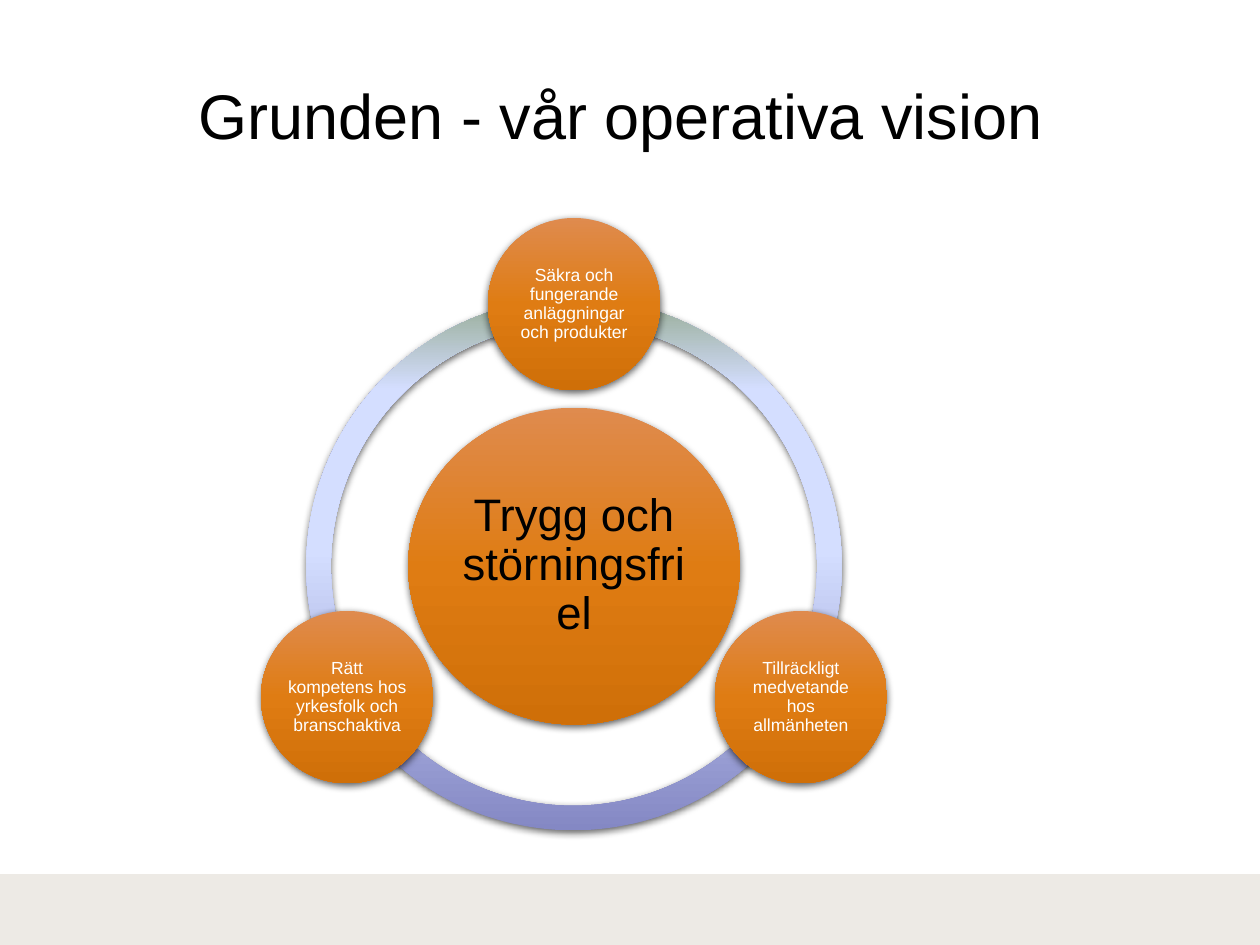
from math import cos, radians, sin

from lxml.etree import SubElement
from pptx import Presentation
from pptx.dml.color import RGBColor
from pptx.enum.shapes import MSO_SHAPE as Shape
from pptx.enum.text import MSO_ANCHOR as Anchor, PP_ALIGN as Align
from pptx.oxml.ns import qn
from pptx.util import Pt

RING_STOPS = [(0, "8488C4"), (53, "D4DEFF"), (83, "D4DEFF"), (100, "96AB94")]
CIRCLE_STOPS = [(0, "DF8B4E"), (50, "DF7C13"), (100, "CF6F08")]
CENTRE_X, CENTRE_Y = 328, 323.5
ORBIT = 149.7
RING_SIZE = 306
SATELLITE_SIZE = 98.5
SATELLITES = [
    (-90, "Säkra och fungerande anläggningar och produkter"),
    (30, "Tillräckligt medvetande hos allmänheten"),
    (150, "Rätt kompetens hos yrkesfolk och branschaktiva"),
]
ARCS = [(150, 270, 175, 170.5), (30, 150, 174.5, 168.5), (270, 30, 175, 170.5)]


def colour(code):
    return RGBColor.from_string(code)


def add_plain(slide, preset, left, top, width, height):
    shape = slide.shapes.add_shape(preset, Pt(left), Pt(top), Pt(width), Pt(height))
    shape.shadow.inherit = False
    shape.line.fill.background()
    return shape


def add_gradient(shape, stops, angle):
    properties = shape.fill._xPr
    gradient = SubElement(properties, qn("a:gradFill"), rotWithShape="1")
    stop_list = SubElement(gradient, qn("a:gsLst"))
    for position, code in stops:
        stop = SubElement(stop_list, qn("a:gs"), pos=str(position * 1000))
        SubElement(stop, qn("a:srgbClr"), val=code)
    SubElement(gradient, qn("a:lin"), ang=str(angle * 60000), scaled="0")
    properties.find(qn("a:ln")).addprevious(gradient)


def add_shadow(shape):
    effects = shape.fill._xPr.find(qn("a:effectLst"))
    shadow = SubElement(
        effects, qn("a:outerShdw"), blurRad=str(Pt(4.5)), dist=str(Pt(1.5)),
        dir=str(90 * 60000), algn="ctr", rotWithShape="0")
    black = SubElement(shadow, qn("a:srgbClr"), val="000000")
    SubElement(black, qn("a:alpha"), val="63000")


def write(frame, text, size, code, align):
    frame.word_wrap = True
    paragraph = frame.paragraphs[0]
    paragraph.text = text
    paragraph.alignment = align
    paragraph.line_spacing = 0.9
    paragraph.font.name = "Arial"
    paragraph.font.size = Pt(size)
    paragraph.font.color.rgb = colour(code)


def add_title(slide, text):
    title = slide.shapes.add_textbox(Pt(106.5), Pt(45), Pt(533), Pt(104))
    title.text_frame.vertical_anchor = Anchor.TOP
    write(title.text_frame, text, 36, "000000", Align.LEFT)


def add_footer_band(slide):
    band = add_plain(slide, Shape.RECTANGLE, 0, 499.5, 720, 40.5)
    band.fill.solid()
    band.fill.fore_color.rgb = colour("EDEAE5")


def add_arc(slide, start, end, left, top):
    arc = add_plain(slide, Shape.BLOCK_ARC, left, top, RING_SIZE, RING_SIZE)
    arc.adjustments[0] = start * 0.6
    arc.adjustments[1] = end * 0.6
    arc.adjustments[2] = 0.046
    add_gradient(arc, RING_STOPS, 270)
    add_shadow(arc)


def add_circle(slide, x, y, width, height, text, size, code, inset):
    circle = add_plain(slide, Shape.OVAL, x - width / 2, y - height / 2, width, height)
    add_gradient(circle, CIRCLE_STOPS, 90)
    add_shadow(circle)
    frame = circle.text_frame
    frame.margin_left = frame.margin_right = Pt(inset)
    frame.margin_top = frame.margin_bottom = Pt(inset)
    frame.vertical_anchor = Anchor.MIDDLE
    write(frame, text, size, code, Align.CENTER)


def main():
    deck = Presentation()
    deck.slide_width, deck.slide_height = Pt(720), Pt(540)
    slide = deck.slides.add_slide(deck.slide_layouts[6])
    add_footer_band(slide)
    add_title(slide, "Grunden - vår operativa vision")
    for arc in ARCS:
        add_arc(slide, *arc)
    add_circle(slide, CENTRE_X, CENTRE_Y, 189.5, 181,
               "Trygg och störningsfri el", 26, "000000", 2.6)
    for angle, text in SATELLITES:
        x = CENTRE_X + ORBIT * cos(radians(angle))
        y = CENTRE_Y + ORBIT * sin(radians(angle))
        add_circle(slide, x, y, SATELLITE_SIZE, SATELLITE_SIZE, text, 10, "FFFFFF", 1)
    deck.save("out.pptx")


if __name__ == "__main__":
    main()
